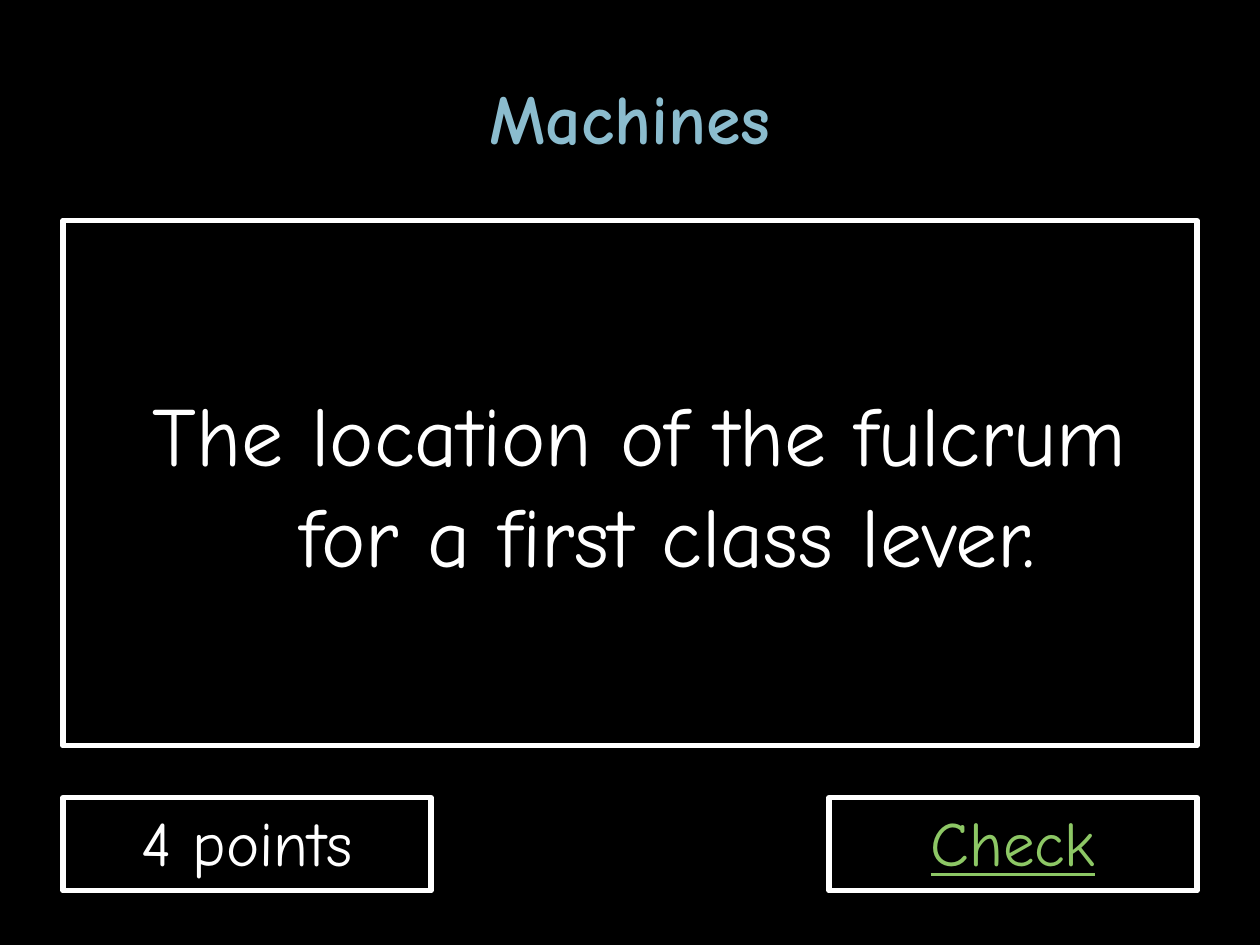
"""Build a quiz question slide with a title, a question box and two footer boxes."""
import pptx
import pptx.dml.color
import pptx.enum.shapes
import pptx.enum.text
import pptx.util

Inches, Pt = pptx.util.Inches, pptx.util.Pt
RGBColor = pptx.dml.color.RGBColor
ANCHOR = pptx.enum.text.MSO_ANCHOR

BLACK = RGBColor(0x00, 0x00, 0x00)
WHITE = RGBColor(0xFF, 0xFF, 0xFF)
BLUE = RGBColor(0x8B, 0xBC, 0xCE)
GREEN = RGBColor(0x8D, 0xC7, 0x65)
FONT = "Comic Neue"

TITLE = "Machines"
QUESTION = "The location of the fulcrum for a first class lever."
POINTS = "4 points"
CHECK = "Check"

WIDTH, HEIGHT, MARGIN = 10, 7.5, 0.5
FULL = WIDTH - 2 * MARGIN
FOOT_TOP, FOOT_W, FOOT_H = 6.33, 2.92, 0.74


def write(sp, text, size, color=WHITE, bold=False, underline=False,
          anchor=ANCHOR.MIDDLE, left=0, hanging=0):
    tf = sp.text_frame
    tf.word_wrap = True
    tf.vertical_anchor = anchor
    p = tf.paragraphs[0]
    p.alignment = pptx.enum.text.PP_ALIGN.CENTER
    if left:
        pPr = p._p.get_or_add_pPr()
        pPr.set("marL", str(Inches(left)))
        pPr.set("indent", str(-Inches(hanging)))
    r = p.add_run()
    r.text = text
    r.font.name = FONT
    r.font.size = Pt(size)
    r.font.bold = bold
    r.font.underline = underline
    r.font.color.rgb = color


def add_frame(s, x, y, w, h):
    sp = s.shapes.add_shape(pptx.enum.shapes.MSO_SHAPE.RECTANGLE,
                            Inches(x), Inches(y), Inches(w), Inches(h))
    sp.shadow.inherit = False
    sp.fill.background()
    sp.line.color.rgb = WHITE
    sp.line.width = Pt(3)
    return sp


def main():
    prs = pptx.Presentation()
    prs.slide_width, prs.slide_height = Inches(WIDTH), Inches(HEIGHT)
    s = prs.slides.add_slide(prs.slide_layouts[6])
    s.background.fill.solid()
    s.background.fill.fore_color.rgb = BLACK

    title = s.shapes.add_textbox(Inches(MARGIN), Inches(0.3), Inches(FULL), Inches(1.25))
    write(title, TITLE, 40, color=BLUE, bold=True)

    question = add_frame(s, MARGIN, 1.75, FULL, 4.17)
    write(question, QUESTION, 48, left=0.6, hanging=0.45)

    footer = [
        (POINTS, MARGIN, {}),
        (CHECK, WIDTH - MARGIN - FOOT_W, {"color": GREEN, "underline": True}),
    ]
    for text, x, style in footer:
        sp = add_frame(s, x, FOOT_TOP, FOOT_W, FOOT_H)
        write(sp, text, 36, anchor=ANCHOR.TOP, **style)

    prs.save("out.pptx")


if __name__ == "__main__":
    main()
